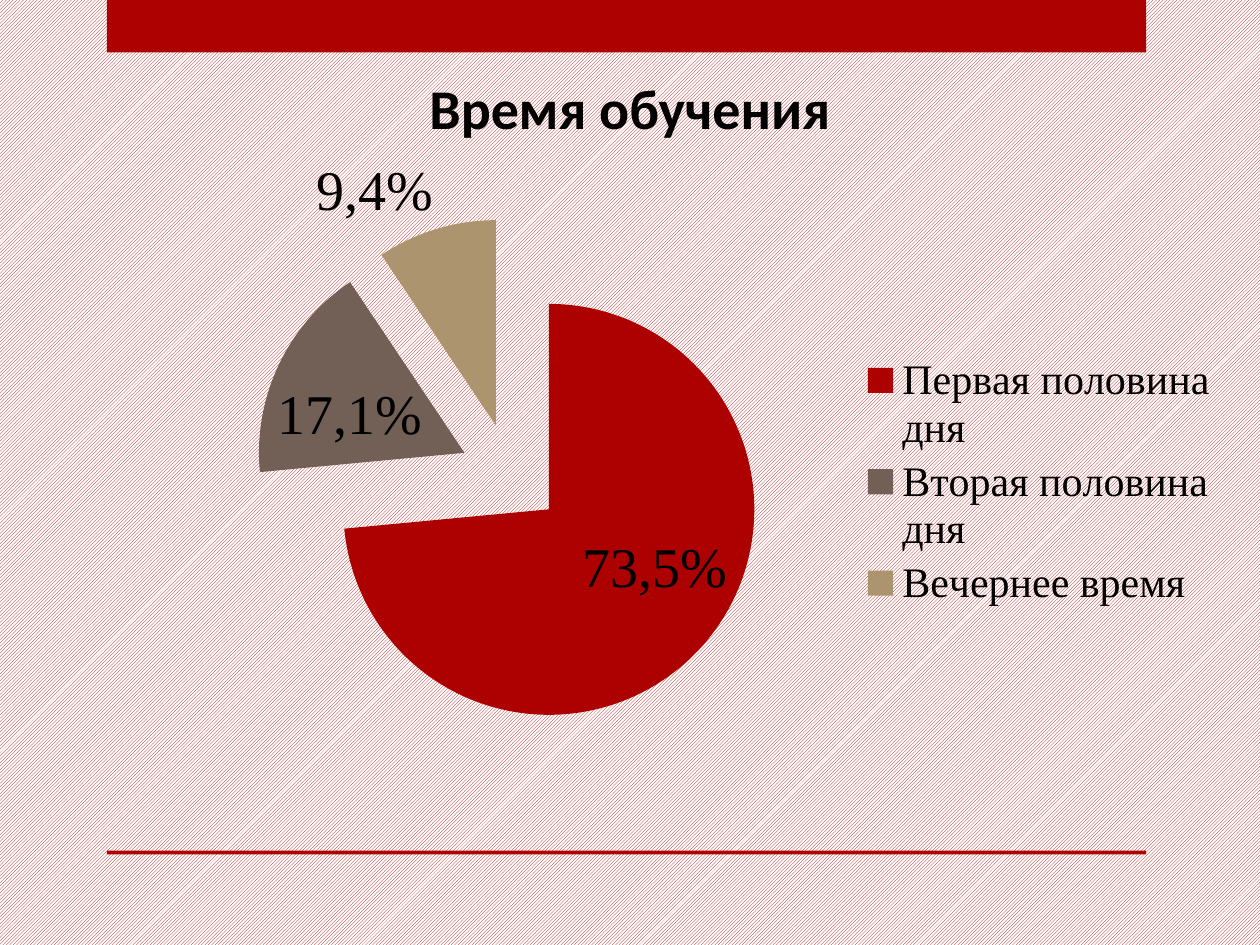
from lxml import etree
from pptx import Presentation
from pptx.chart.data import CategoryChartData
from pptx.dml.color import RGBColor
from pptx.enum.chart import XL_CHART_TYPE as CHART, XL_LEGEND_POSITION as LEGEND
from pptx.enum.chart import XL_LABEL_POSITION as LABEL
from pptx.enum.dml import MSO_PATTERN as PATTERN
from pptx.enum.shapes import MSO_SHAPE as SHAPE
from pptx.enum.text import MSO_ANCHOR as ANCHOR, PP_ALIGN as ALIGN
from pptx.oxml.ns import qn
from pptx.util import Pt

RED, BLACK, WHITE = "AD0101", "000000", "FFFFFF"
SERIF, SANS = "Times New Roman", "Calibri"
# Category, share in percent, slice colour
SHARES = [
    ("Первая половина дня", 73.5, RED),
    ("Вторая половина дня", 17.1, "726056"),
    ("Вечернее время", 9.4, "AC956E"),
]


def rgb(value):
    return RGBColor.from_string(value)


def set_font(font, size, name=SERIF, color=BLACK, bold=False):
    font.name, font.size, font.bold = name, Pt(size), bold
    font.color.rgb = rgb(color)


def add_text(tf, text, align=None, **fmt):
    p = tf.paragraphs[0]
    p.alignment = align
    r = p.add_run()
    r.text = text
    set_font(r.font, **fmt)


def set_layout(layout, x, y, w, h, target=None):
    """Fix a chart part at fractions of the chart's area."""
    for child in list(layout):
        layout.remove(child)
    manual = etree.SubElement(layout, qn("c:manualLayout"))
    values = [("layoutTarget", target)] if target else []
    values += [("xMode", "edge"), ("yMode", "edge"),
               ("x", x), ("y", y), ("w", w), ("h", h)]
    for tag, val in values:
        etree.SubElement(manual, qn("c:" + tag)).set("val", str(val))


def get_layout(parent, before):
    """Return the layout of a chart part, made after the named element if absent."""
    layout = parent.find(qn("c:layout"))
    if layout is None:
        layout = etree.Element(qn("c:layout"))
        prior = parent.find(qn(before)) if before else None
        parent.insert(0 if prior is None else parent.index(prior) + 1, layout)
    return layout


def add_frame(slide, left, width):
    # Top band and bottom rule
    for top, height in ((0, 30), (486, 2.3)):
        s = slide.shapes.add_shape(SHAPE.RECTANGLE, Pt(left), Pt(top), Pt(width), Pt(height))
        s.shadow.inherit = False
        s.fill.solid()
        s.fill.fore_color.rgb = rgb(RED)
        s.line.fill.background()


def add_title(slide, left, top, width, height):
    s = slide.shapes.title
    s.left, s.top, s.width, s.height = Pt(left), Pt(top), Pt(width), Pt(height)
    tf = s.text_frame
    tf.word_wrap = False
    tf.vertical_anchor = ANCHOR.MIDDLE
    add_text(tf, "Время обучения", ALIGN.CENTER, size=32, name=SANS, bold=True)


def add_pie(slide, left, top, width, height):
    data = CategoryChartData(number_format="0.0")
    data.categories = [name for name, _, _ in SHARES]
    data.add_series("Series 1", [share for _, share, _ in SHARES])
    chart = slide.shapes.add_chart(
        CHART.PIE_EXPLODED, Pt(left), Pt(top), Pt(width), Pt(height), data).chart
    chart.has_title = False
    set_font(chart.font, 10)

    # Legend
    chart.has_legend = True
    legend = chart.legend
    legend.position = LEGEND.RIGHT
    legend.include_in_layout = False
    set_font(legend.font, 24)
    set_layout(get_layout(legend._element, "c:legendPos"), 0.68, 0.31, 0.32, 0.38)

    # Slices with their labels
    plot = chart.plots[0]
    plot.vary_by_categories = True
    series = plot.series[0]
    explosion = series._element.find(qn("c:explosion"))
    explosion.set("val", "25")
    labels = series.data_labels
    labels.show_value = True
    set_font(labels.font, 32)
    for i, (_, share, color) in enumerate(SHARES):
        point = series.points[i]
        point.format.fill.solid()
        point.format.fill.fore_color.rgb = rgb(color)
        point.format.line.fill.background()
        text = f"{share}%".replace(".", ",")
        add_text(point.data_label.text_frame, text, size=32)
        point.data_label.position = LABEL.BEST_FIT
    # Each point needs the offset of its series
    for dpt in series._element.findall(qn("c:dPt")):
        if dpt.find(qn("c:explosion")) is None:
            offset = etree.Element(qn("c:explosion"))
            offset.set("val", "25")
            dpt.find(qn("c:spPr")).addprevious(offset)

    area = chart._chartSpace.chart.plotArea
    set_layout(get_layout(area, None), 0.16, 0.12, 0.45, 0.74, "inner")


def main():
    prs = Presentation()
    prs.slide_width, prs.slide_height = Pt(720), Pt(540)
    slide = prs.slides.add_slide(prs.slide_layouts[5])
    # Hatched background
    fill = slide.background.fill
    fill.patterned()
    fill.pattern = PATTERN.LIGHT_UPWARD_DIAGONAL
    fill.fore_color.rgb = rgb(RED)
    fill.back_color.rgb = rgb(WHITE)

    add_frame(slide, 61, 594)
    add_pie(slide, 36.7, 77, 663, 396.7)
    add_title(slide, 237, 38, 246, 46)
    prs.save("out.pptx")


if __name__ == "__main__":
    main()
